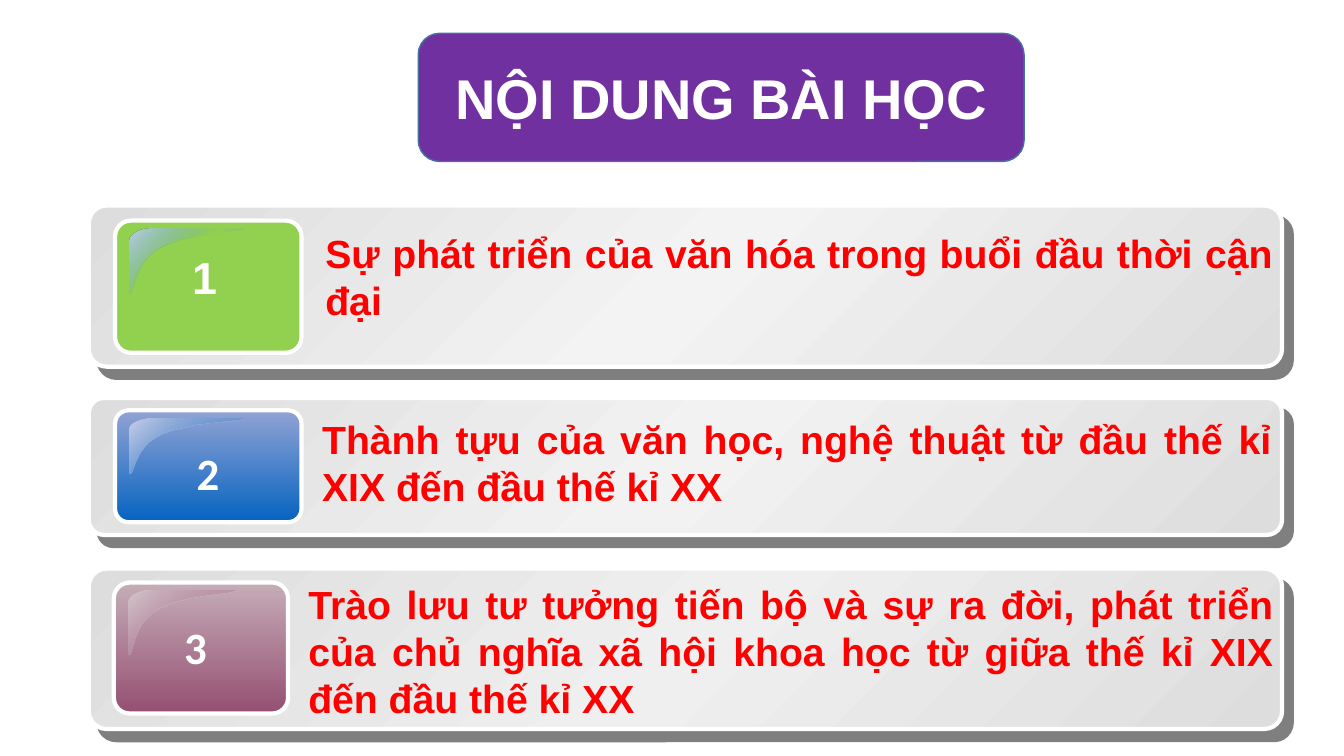
from lxml import etree
from pptx import Presentation
from pptx.dml.color import RGBColor
from pptx.enum.shapes import MSO_SHAPE
from pptx.enum.text import MSO_ANCHOR, MSO_AUTO_SIZE, PP_ALIGN
from pptx.oxml.ns import qn
from pptx.util import Cm, Pt

ROUNDED = MSO_SHAPE.ROUNDED_RECTANGLE
CENTER, JUSTIFY = PP_ALIGN.CENTER, PP_ALIGN.JUSTIFY
MIDDLE, TOP = MSO_ANCHOR.MIDDLE, MSO_ANCHOR.TOP
GROW = MSO_AUTO_SIZE.SHAPE_TO_FIT_TEXT

THEME = {
    "white": "FFFFFF", "topic": "FF0000", "title_fill": "7030A0",
    "title_line": "43739E", "card_edge": "DDDDDD", "shadow": "000000",
    "font": "Arial", "title_size": 40, "number_size": 32, "topic_size": 28,
}


def paint(shape, stops, angle=0, line=None, weight=3):
    shape.shadow.inherit = False
    if len(stops) == 1:
        shape.fill.solid()
        shape.fill.fore_color.rgb = RGBColor.from_string(stops[0][1])
    else:
        shape.fill.gradient()
        shape.fill.gradient_angle = -angle % 360
        stop_list = shape._element.spPr.find(qn("a:gradFill")).find(qn("a:gsLst"))
        for old_stop in list(stop_list):
            stop_list.remove(old_stop)
        for position, color, *alpha in stops:
            stop = etree.SubElement(stop_list, qn("a:gs"), pos=str(position * 1000))
            tint = etree.SubElement(stop, qn("a:srgbClr"), val=color)
            for value in alpha:
                etree.SubElement(tint, qn("a:alpha"), val=str(value * 1000))
    if line:
        shape.line.color.rgb = RGBColor.from_string(line)
        shape.line.width = Pt(weight)
    else:
        shape.line.fill.background()


def write(box, text, size, color, align, font=THEME["font"], **frame_format):
    for name, value in frame_format.items():
        setattr(box.text_frame, name, value)
    para = box.text_frame.paragraphs[0]
    para.alignment = align
    span = para.add_run()
    span.text = text
    span.font.color.rgb = RGBColor.from_string(color)
    for name, value in {"name": font, "size": Pt(size), "bold": True}.items():
        setattr(span.font, name, value)


deck = Presentation()
deck.slide_width, deck.slide_height = Cm(33.87), Cm(19.05)
page = deck.slides.add_slide(deck.slide_layouts[6])

CARD_LEFT, CARD_WIDTH = 2.24, 30.07
GLARE_CURVES = [
    [(0.2, 0), (0.09, 0), (0, 0.09), (0, 0.2)],
    [(0, 0.98), (0.05, 1), (0.03, 0.52), (0.27, 0.29)],
    [(0.27, 0.29), (0.53, 0.06), (1, 0.05), (0.99, 0)],
]
STEPS = 12

topics = [
    {
        "text": "Sự phát triển của văn hóa trong buổi đầu thời cận đại",
        "card": (5.18, 4.06), "middle": "F3F3F3",
        "badge": (2.9, 5.56, 4.7, 3.33), "badge_stops": [(0, "92D050")],
        "glare": [(0, "BED0E9"), (50, "5B9BD5", 0), (100, "BED0E9")],
        "number": (4.52, 6.17, 1.3, 1.9), "number_font": "Arial",
        "label": (7.95, 5.66, 24.38, 2.64),
    },
    {
        "text": "Thành tựu của văn học, nghệ thuật từ đầu thế kỉ XIX đến đầu thế kỉ XX",
        "card": (10.03, 3.45), "middle": "F2F2F2",
        "badge": (2.9, 10.34, 4.7, 2.82),
        "badge_stops": [(0, "91A3D4"), (100, "0563C1")],
        "glare": [(0, "C9D0E7"), (100, "0563C1", 0)],
        "number": (4.62, 11.1, 1.24, 1.63), "number_font": "Calibri",
        "label": (7.87, 10.34, 24.43, 2.64),
    },
    {
        "text": "Trào lưu tư tưởng tiến bộ và sự ra đời, phát triển của chủ nghĩa "
                "xã hội khoa học từ giữa thế kỉ XIX đến đầu thế kỉ XX",
        "card": (14.33, 4.04), "middle": "EFEFEF",
        "badge": (2.87, 14.68, 4.39, 3.3),
        "badge_stops": [(0, "C5ADB7"), (100, "954F72")],
        "glare": [(0, "D4C4CB"), (100, "954F72", 0)],
        "number": (4.34, 15.49, 1.17, 1.88), "number_font": "Calibri",
        "label": (7.52, 14.5, 24.82, 3.84),
    },
]

for number, topic in enumerate(topics, 1):
    top, height = topic["card"]
    card = page.shapes.add_shape(ROUNDED, Cm(CARD_LEFT), Cm(top), Cm(CARD_WIDTH), Cm(height))
    card.adjustments[0] = 0.11
    edge = THEME["card_edge"]
    paint(card, [(0, edge), (50, topic["middle"]), (100, edge)], 45, THEME["white"])
    effects = card._element.spPr.find(qn("a:effectLst"))
    shadow = etree.SubElement(effects, qn("a:outerShdw"), blurRad="0",
                              dist=str(Pt(10.6)), dir=str(49 * 60000),
                              algn="ctr", rotWithShape="0")
    shade = etree.SubElement(shadow, qn("a:srgbClr"), val=THEME["shadow"])
    etree.SubElement(shade, qn("a:alpha"), val="50000")

    left, top, width, height = topic["badge"]
    badge = page.shapes.add_shape(ROUNDED, *map(Cm, topic["badge"]))
    badge.adjustments[0] = 0.12
    paint(badge, topic["badge_stops"], 90, THEME["white"])

    outline = []
    for start, pull, push, end in GLARE_CURVES:
        for step in range(STEPS + 1):
            t = step / STEPS
            x, y = (
                (1 - t) ** 3 * a + 3 * (1 - t) ** 2 * t * b + 3 * (1 - t) * t ** 2 * c + t ** 3 * d
                for a, b, c, d in zip(start, pull, push, end)
            )
            outline.append((Cm(left + 0.36 + x * width * 0.62),
                            Cm(top + 0.2 + y * height * 0.5)))
    builder = page.shapes.build_freeform(*outline[0])
    builder.add_line_segments(outline[1:], close=True)
    paint(builder.convert_to_shape(), topic["glare"], 45)

    number_box = page.shapes.add_textbox(*map(Cm, topic["number"]))
    write(number_box, str(number), THEME["number_size"], THEME["white"], CENTER,
          topic["number_font"], word_wrap=False, auto_size=GROW, vertical_anchor=TOP)
    label_box = page.shapes.add_textbox(*map(Cm, topic["label"]))
    write(label_box, topic["text"], THEME["topic_size"], THEME["topic"], JUSTIFY,
          word_wrap=True, auto_size=GROW, vertical_anchor=TOP)

title = page.shapes.add_shape(ROUNDED, Cm(10.54), Cm(0.84), Cm(15.27), Cm(3.23))
paint(title, [(0, THEME["title_fill"])], line=THEME["title_line"], weight=1)
write(title, "NỘI DUNG BÀI HỌC", THEME["title_size"], THEME["white"], CENTER,
      word_wrap=True, vertical_anchor=MIDDLE)

deck.save("out.pptx")
